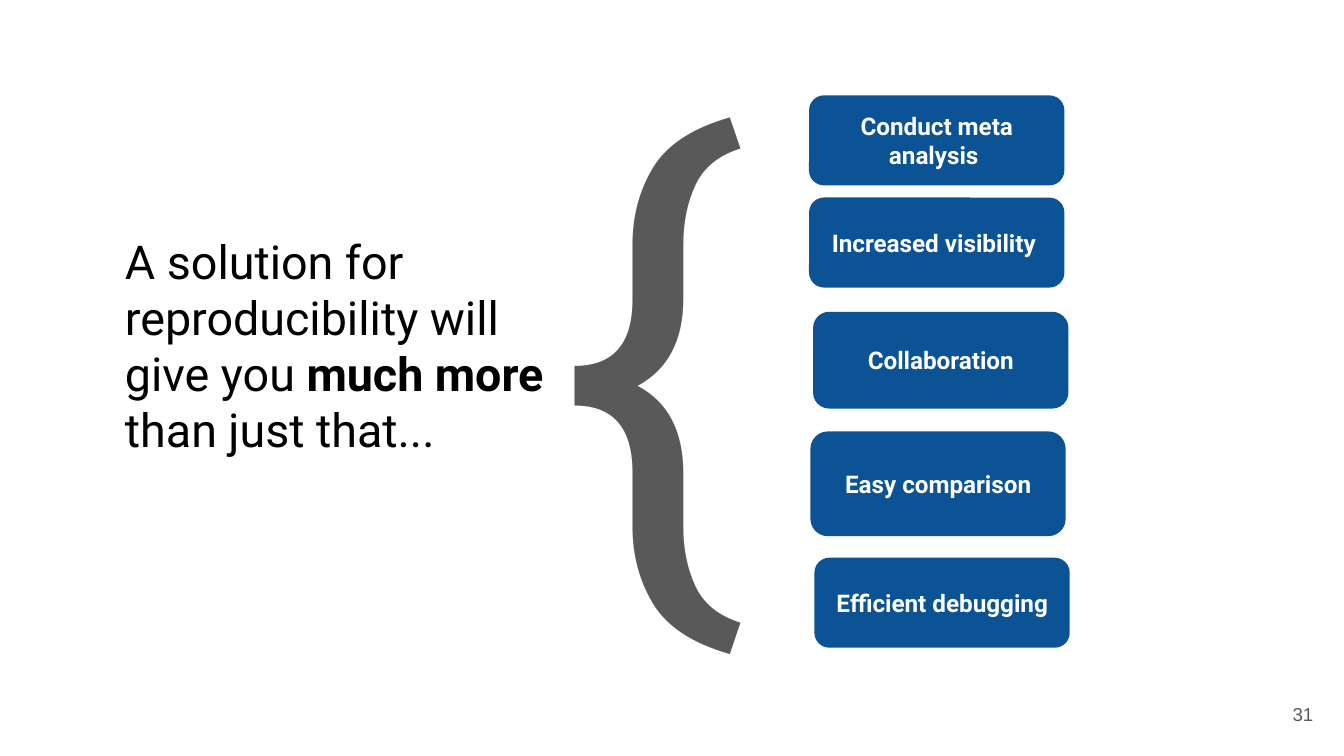
import pptx
import pptx.util
from pptx.dml.color import RGBColor
from pptx.enum.shapes import MSO_SHAPE
from pptx.enum.text import MSO_ANCHOR, MSO_AUTO_SIZE, PP_ALIGN

Inches = pptx.util.Inches
TITLE_ONLY = 5


def color(hex_code):
    return RGBColor.from_string(hex_code)


class SlideStyle:
    font = "Roboto"
    black, white, gray, blue = "000000", "FFFFFF", "595959", "0B5394"

    def __init__(self, slide):
        self.slide = slide

    def format_text(self, frame, size, hex_code, align, anchor, font=None, bold=None):
        frame.word_wrap = True
        frame.auto_size = MSO_AUTO_SIZE.NONE
        frame.vertical_anchor = anchor
        frame.margin_left = frame.margin_right = Inches(0.1)
        frame.margin_top = frame.margin_bottom = Inches(0.1)
        paragraph = frame.paragraphs[0]
        paragraph.alignment = align
        paragraph.font.name = font or self.font
        paragraph.font.size = pptx.util.Pt(size)
        paragraph.font.bold = bold
        paragraph.font.color.rgb = color(hex_code)

    def title(self, left, top, width, height, parts):
        heading = self.slide.shapes.title
        heading.left, heading.top = Inches(left), Inches(top)
        heading.width, heading.height = Inches(width), Inches(height)
        for text, bold in parts:
            run = heading.text_frame.paragraphs[0].add_run()
            run.text = text
            run.font.bold = bold
        self.format_text(heading.text_frame, 25, self.black, PP_ALIGN.LEFT, MSO_ANCHOR.TOP)

    def label(self, left, top, width, height, text, size, align, anchor, font=None):
        box = self.slide.shapes.add_textbox(
            Inches(left), Inches(top), Inches(width), Inches(height))
        box.text_frame.text = text
        self.format_text(box.text_frame, size, self.gray, align, anchor, font)

    def benefit(self, left, top, height, text):
        card = self.slide.shapes.add_shape(
            MSO_SHAPE.ROUNDED_RECTANGLE,
            Inches(left), Inches(top), Inches(1.9), Inches(height))
        card.shadow.inherit = False
        card.fill.solid()
        card.fill.fore_color.rgb = color(self.blue)
        card.line.fill.background()
        card.text_frame.text = text
        self.format_text(card.text_frame, 13, self.white, PP_ALIGN.CENTER,
                         MSO_ANCHOR.MIDDLE, bold=True)


def main():
    # 16:9 slide
    deck = pptx.Presentation()
    deck.slide_width, deck.slide_height = Inches(10), Inches(10 * 9 / 16)
    page = SlideStyle(deck.slides.add_slide(deck.slide_layouts[TITLE_ONLY]))

    # Statement on the left
    page.title(0.83, 1.63, 3.63, 0.63, [
        ("A solution for reproducibility will give you ", False),
        ("much more ", True),
        ("than just that...", False),
    ])

    # Benefits: left, top, height, text
    for benefit in [
        (6.02, 0.71, 0.67, "Conduct meta analysis "),
        (6.02, 1.47, 0.67, "Increased visibility "),
        (6.05, 2.32, 0.72, "Collaboration"),
        (6.03, 3.21, 0.78, "Easy comparison"),
        (6.06, 4.15, 0.67, "Efficient debugging"),
    ]:
        page.benefit(*benefit)

    # Brace leading to the benefits
    page.label(4.05, -0.14, 3.63, 0.63, "{", 300, PP_ALIGN.LEFT, MSO_ANCHOR.TOP)

    # Slide number
    page.label(9.27, 5.1, 0.6, 0.43, "31", 10, PP_ALIGN.RIGHT, MSO_ANCHOR.MIDDLE, "Arial")

    deck.save("out.pptx")


if __name__ == "__main__":
    main()
